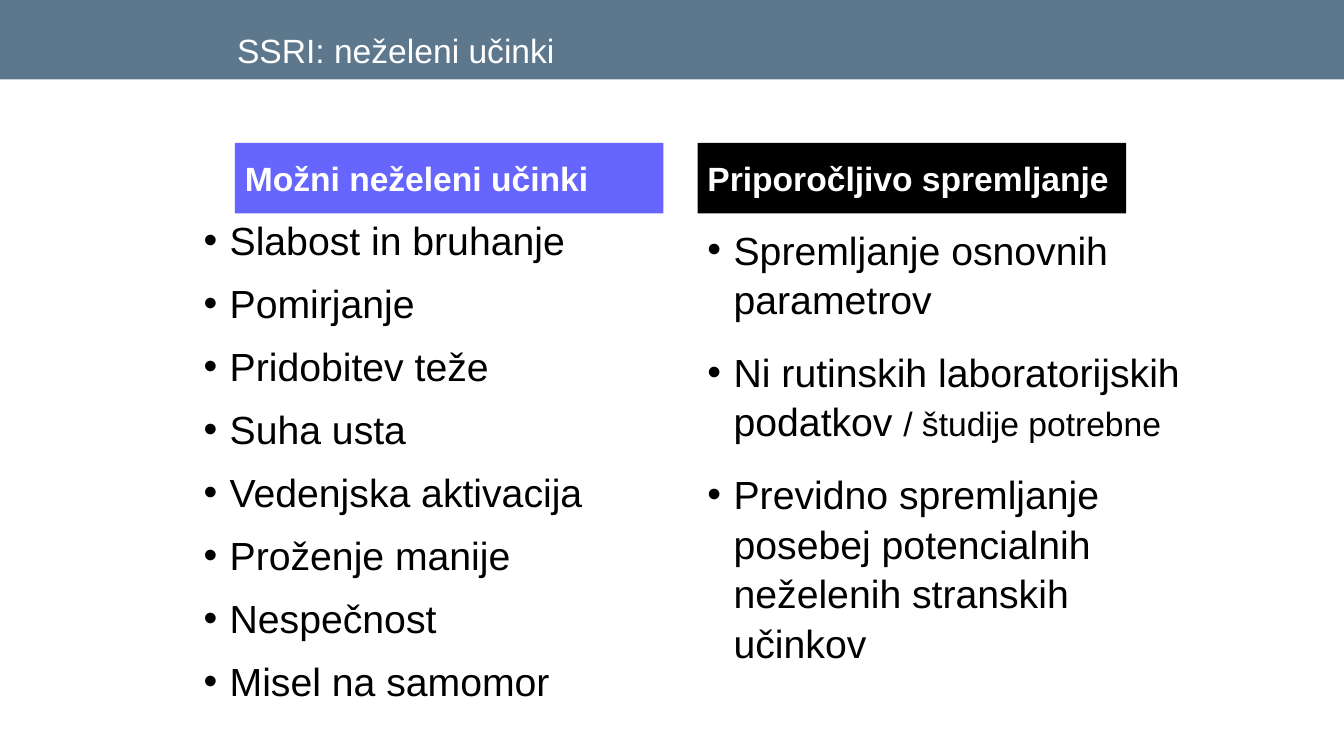
from dataclasses import dataclass

from lxml import etree
from pptx import Presentation
from pptx import util as u
from pptx.dml.color import RGBColor
from pptx.enum import shapes, text
from pptx.oxml.ns import qn

# Content: a paragraph is a tuple of (text, is_small) runs
TITLE = "SSRI: neželeni učinki"
EFFECTS_HEADING = "Možni neželeni učinki"
EFFECTS = [
    [(line, False)] for line in (
        "Slabost in bruhanje", "Pomirjanje", "Pridobitev teže", "Suha usta",
        "Vedenjska aktivacija", "Proženje manije", "Nespečnost", "Misel na samomor",
    )
]
MONITORING_HEADING = "Priporočljivo spremljanje"
MONITORING = [
    [("Spremljanje osnovnih parametrov", False)],
    [("Ni rutinskih laboratorijskih podatkov ", False), ("/ študije potrebne", True)],
    [("Previdno spremljanje posebej potencialnih neželenih stranskih učinkov", False)],
]


@dataclass(frozen=True)
class Theme:
    font: str = "Arial"
    band: str = "5D778D"
    violet: str = "6666FF"
    black: str = "000000"
    white: str = "FFFFFF"
    heading: int = 24
    body: int = 28
    space_before: float = 16.8


T = Theme()
SLIDE_W, SLIDE_H = u.Cm(33.87), u.Cm(19.05)
HEAD_TOP, HEAD_W, HEAD_H = u.Cm(3.6), u.Cm(10.8), u.Cm(1.78)
LIST_TOP, LIST_H = u.Cm(5.51), u.Cm(9.96)
INDENT = u.Cm(0.66)

# Each column: heading, fill, heading left, items, list left, list width, line spacing
COLUMNS = [
    (EFFECTS_HEADING, T.violet, u.Cm(5.92), EFFECTS, u.Cm(4.88), u.Cm(11.86), 0.84),
    (MONITORING_HEADING, T.black, u.Cm(17.58), MONITORING, u.Cm(17.58), u.Cm(12.5), 1.05),
]


def style(r, size, color, bold=False):
    r.font.name, r.font.size, r.font.bold = T.font, u.Pt(size), bold
    r.font.color.rgb = RGBColor.from_string(color)


def set_heading(sp, words, anchor, bold=False):
    tf = sp.text_frame
    tf.word_wrap = True
    tf.auto_size = text.MSO_AUTO_SIZE.NONE
    tf.vertical_anchor = anchor
    tf.text = words
    p = tf.paragraphs[0]
    p.alignment = text.PP_ALIGN.LEFT
    style(p.runs[0], T.heading, T.white, bold)


def add_block(s, left, top, width, height, color):
    sp = s.shapes.add_shape(shapes.MSO_SHAPE.RECTANGLE, left, top, width, height)
    sp.shadow.inherit = False
    sp.fill.solid()
    sp.fill.fore_color.rgb = RGBColor.from_string(color)
    sp.line.fill.background()
    return sp


def add_bullet(p):
    pPr = p._p.get_or_add_pPr()
    pPr.set("marL", str(INDENT))
    pPr.set("indent", str(-INDENT))
    etree.SubElement(pPr, qn("a:buFont")).set("typeface", T.font)
    etree.SubElement(pPr, qn("a:buChar")).set("char", "•")


def add_list(s, left, width, items, spacing):
    tf = s.shapes.add_textbox(left, LIST_TOP, width, LIST_H).text_frame
    tf.word_wrap = True
    for i, runs in enumerate(items):
        p = tf.add_paragraph() if i else tf.paragraphs[0]
        p.line_spacing = spacing
        p.space_before = u.Pt(T.space_before)
        add_bullet(p)
        for words, is_small in runs:
            r = p.add_run()
            r.text = words
            style(r, T.heading if is_small else T.body, T.black)


def main():
    prs = Presentation()
    prs.slide_width, prs.slide_height = SLIDE_W, SLIDE_H
    s = prs.slides.add_slide(prs.slide_layouts[5])

    # Top band, placed behind the title
    band = add_block(s, 0, 0, SLIDE_W, u.Cm(2), T.band)
    s.shapes._spTree.insert(2, band._element)

    # Title
    title = s.shapes.title
    title.left, title.top = u.Cm(5.72), u.Cm(0.76)
    title.width, title.height = u.Cm(22.66), u.Cm(1.14)
    set_heading(title, TITLE, text.MSO_ANCHOR.BOTTOM)

    # Two columns: heading block and bulleted list
    for heading, color, head_left, items, left, width, spacing in COLUMNS:
        add_list(s, left, width, items, spacing)
        sp = add_block(s, head_left, HEAD_TOP, HEAD_W, HEAD_H, color)
        set_heading(sp, heading, text.MSO_ANCHOR.MIDDLE, bold=True)

    prs.save("out.pptx")


if __name__ == "__main__":
    main()
